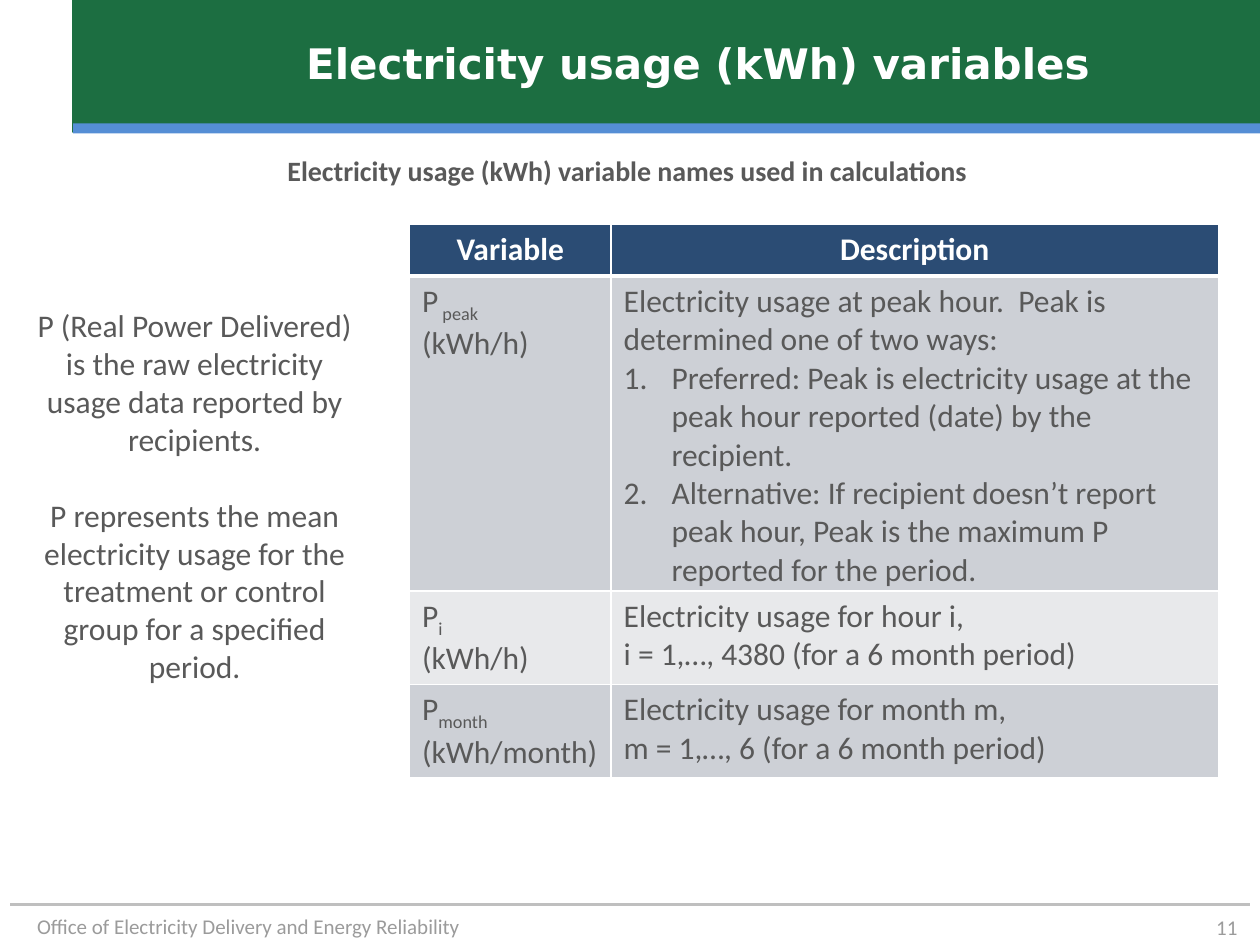
"""Builds the slide on electricity usage variables."""
from lxml import etree
from pptx import Presentation
from pptx.dml.color import RGBColor
from pptx.enum.shapes import MSO_CONNECTOR, MSO_SHAPE
from pptx.enum.text import MSO_ANCHOR, PP_ALIGN
from pptx.oxml.ns import qn
from pptx.util import Inches, Pt

LEFT, MID, RIGHT = PP_ALIGN.LEFT, PP_ALIGN.CENTER, PP_ALIGN.RIGHT
TOP, CENTER = MSO_ANCHOR.TOP, MSO_ANCHOR.MIDDLE
RECT, LINE = MSO_SHAPE.RECTANGLE, MSO_CONNECTOR.STRAIGHT
WHITE, GRAY, PALE, NAVY = "FFFFFF", "595959", "9B9B9B", "2B4C74"
DARK, LIGHT = "CDD0D6", "E8E9EB"


def color(code):
    return RGBColor.from_string(code)


class Deck:
    def __init__(self, wide, high, font="Calibri"):
        self.font = font
        self.prs = Presentation()
        self.prs.slide_width, self.prs.slide_height = Inches(wide), Inches(high)
        self.slide = self.prs.slides.add_slide(self.prs.slide_layouts[6])

    def bar(self, at, fill, edge=None):
        shape = self.slide.shapes.add_shape(RECT, *map(Inches, at))
        shape.shadow.inherit = False
        shape.fill.solid()
        shape.fill.fore_color.rgb = color(fill)
        if edge:
            shape.line.color.rgb = color(fill)
            shape.line.width = Pt(edge)
        else:
            shape.line.fill.background()

    def rule(self, start, end, ink, width):
        line = self.slide.shapes.add_connector(LINE, *map(Inches, start + end))
        line.line.color.rgb = color(ink)
        line.line.width = Pt(width)
        etree.SubElement(line._element.spPr, qn("a:effectLst"))

    def put(self, frame, paras, size, ink, bold=False, align=LEFT, font=None, gap=0):
        for i, runs in enumerate(paras):
            para = frame.add_paragraph() if i else frame.paragraphs[0]
            para.alignment = align
            if i and gap:
                para.space_before = Pt(gap)
            for part in [runs] if isinstance(runs, str) else runs:
                words, low = (part, False) if isinstance(part, str) else part
                run = para.add_run()
                run.text = words
                run.font.name = font or self.font
                run.font.size, run.font.bold = Pt(size), bold
                run.font.color.rgb = color(ink)
                if low:
                    run.font._element.set("baseline", "-25000")

    def text(self, at, paras, size, ink, anchor=TOP, inset=(0.1, 0.05, 0.1, 0.05), **style):
        frame = self.slide.shapes.add_textbox(*map(Inches, at)).text_frame
        frame.word_wrap = True
        frame.vertical_anchor = anchor
        (frame.margin_left, frame.margin_top,
         frame.margin_right, frame.margin_bottom) = map(Inches, inset)
        self.put(frame, paras, size, ink, **style)

    def edges(self, cell, base):
        props = cell._tc.get_or_add_tcPr()
        for i, side in enumerate("LRTB"):
            width = Pt(base if side == "B" else 1)
            line = etree.Element(qn("a:ln" + side), w=str(width))
            fill = etree.SubElement(line, qn("a:solidFill"))
            etree.SubElement(fill, qn("a:srgbClr"), val=WHITE)
            props.insert(i, line)

    def number(self, paras):
        indent = Inches(0.38)
        for para in paras:
            props = para._p.get_or_add_pPr()
            props.set("marL", str(indent))
            props.set("indent", str(-indent))
            font = etree.Element(qn("a:buFont"), typeface="+mj-lt")
            mark = etree.Element(qn("a:buAutoNum"), type="arabicPeriod")
            props.extend([font, mark])

    def table(self, at, cols, high, rows):
        size = (sum(cols), high * len(rows))
        grid = self.slide.shapes.add_table(
            len(rows), len(cols), *map(Inches, at + size)).table
        for col, width in zip(grid.columns, cols):
            col.width = Inches(width)
        for r, row in enumerate(rows):
            grid.rows[r].height = Inches(high)
            head = r == 0
            for c, paras in enumerate(row):
                cell = grid.cell(r, c)
                cell.fill.solid()
                cell.fill.fore_color.rgb = color(NAVY if head else DARK if r % 2 else LIGHT)
                self.edges(cell, 3 if head else 1)
                self.put(cell.text_frame, paras, 18, WHITE if head else GRAY,
                         bold=head, align=MID if head else LEFT)
        return grid


def main():
    deck = Deck(10, 7.5)
    deck.bar((0.58, 0, 9.42, 1.05), "1C6E41", 1)
    deck.bar((0.58, 0.98, 9.42, 0.08), "558ED5")
    deck.text((0, 7.2, 3.75, 0.3), ["Office of Electricity Delivery and Energy Reliability"],
              12, PALE, align=RIGHT)
    deck.rule((0.08, 7.18), (9.92, 7.18), "BFBFBF", 1.75)
    deck.text((7.42, 7.21, 2.5, 0.29), ["11"], 12, PALE, CENTER, (0, 0, 0.1, 0), align=RIGHT)
    deck.text((1.08, 0, 8.92, 1), ["Electricity usage (kWh) variables"], 24, WHITE,
              CENTER, bold=True, align=MID, font="DejaVu Sans")
    deck.text((0.33, 1.17, 9.3, 0.67),
              ["Electricity usage (kWh) variable names used in calculations"],
              16, GRAY, bold=True, align=MID)
    grid = deck.table((3.25, 1.78), (1.6, 4.82), 0.41, [
        (["Variable"], ["Description"]),
        ([["P", (" peak", True)], "(kWh/h)"],
         ["Electricity usage at peak hour.  Peak is determined one of two ways:",
          "Preferred: Peak is electricity usage at the peak hour reported (date) "
          "by the recipient.",
          "Alternative: If recipient doesn’t report peak hour, Peak is the maximum P "
          "reported for the period."]),
        ([["P", ("i", True)], "(kWh/h)"],
         ["Electricity usage for hour i,", "i = 1,…, 4380 (for a 6 month period)"]),
        ([["P", ("month ", True), "(kWh/month)"]],
         ["Electricity usage for month m,", "m = 1,…, 6 (for a 6 month period)"]),
    ])
    deck.number(grid.cell(1, 1).text_frame.paragraphs[1:])
    deck.text((0.17, 2.33, 2.75, 1.33),
              ["P (Real Power Delivered) is the raw electricity usage data reported "
               "by recipients.",
               "P represents the mean electricity usage for the treatment or control "
               "group for a specified period."],
              18, GRAY, inset=(0.1,) * 4, align=MID, gap=22)
    deck.prs.save("out.pptx")


if __name__ == "__main__":
    main()
